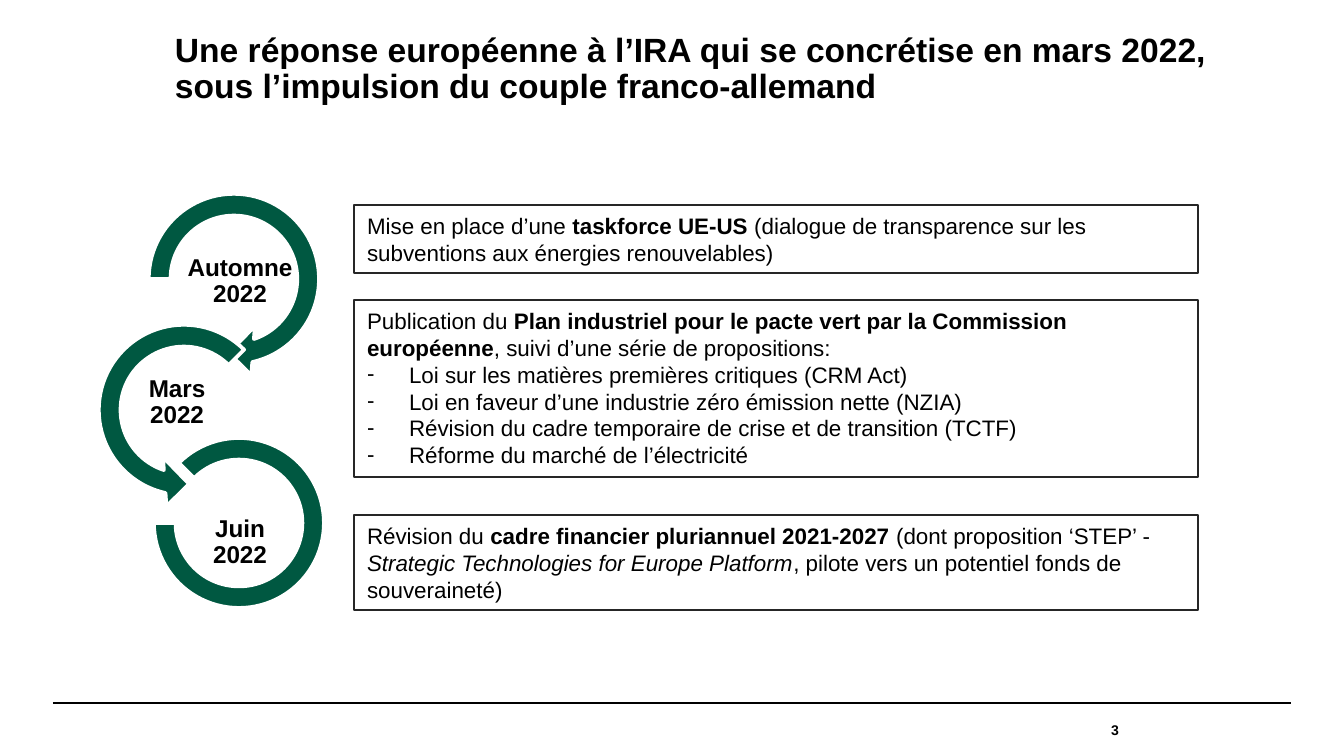
from lxml.etree import SubElement
from pptx import Presentation
from pptx.dml.color import RGBColor
from pptx.enum.shapes import MSO_CONNECTOR, MSO_SHAPE
from pptx.enum.text import MSO_ANCHOR, PP_ALIGN
from pptx.oxml.ns import qn
from pptx.util import Emu, Pt

SCALE = 914400 / 134.4  # EMU per px
BLACK, WHITE, GREEN, BORDER = "000000", "FFFFFF", "005841", "262626"


def color(value):
    return RGBColor.from_string(value)


def write(shape, paragraphs, size, inset=(0, 0), anchor=MSO_ANCHOR.TOP,
          align=PP_ALIGN.LEFT, spacing=1.0):
    """Each paragraph is a list of (text, style); style holds b, i or - (bullet)."""
    frame = shape.text_frame
    frame.word_wrap = True
    frame.vertical_anchor = anchor
    frame.margin_left = frame.margin_right = Emu(round(inset[0] * SCALE))
    frame.margin_top = frame.margin_bottom = Emu(round(inset[1] * SCALE))
    for index, runs in enumerate(paragraphs):
        paragraph = frame.add_paragraph() if index else frame.paragraphs[0]
        paragraph.alignment = align
        paragraph.line_spacing = spacing
        if "-" in runs[0][1]:
            properties = paragraph._p.get_or_add_pPr()
            indent = round(42 * SCALE)
            properties.set("marL", str(indent))
            properties.set("indent", str(-indent))
            SubElement(properties, qn("a:buFont"), typeface="Arial")
            SubElement(properties, qn("a:buChar"), char="-")
        for text, style in runs:
            run = paragraph.add_run()
            run.text = text
            run.font.name = "Arial"
            run.font.size = Pt(size)
            run.font.bold = "b" in style
            run.font.italic = "i" in style
            run.font.color.rgb = color(BLACK)


presentation = Presentation()
presentation.slide_width = Emu(round(1344 * SCALE))
presentation.slide_height = Emu(round(756 * SCALE))
slide = presentation.slides.add_slide(presentation.slide_layouts[6])
shapes = slide.shapes

# Footer rule
start, end, level = (Emu(round(value * SCALE)) for value in (53, 1291, 703))
rule = shapes.add_connector(MSO_CONNECTOR.STRAIGHT, start, level, end, level)
rule.line.color.rgb = color(BLACK)
rule.line.width = Pt(0.8)
SubElement(rule._element.spPr, qn("a:effectLst"))

# Title
title = shapes.add_textbox(*(Emu(round(value * SCALE)) for value in (175, 33, 1071, 79)))
write(title, [[("Une réponse européenne à l’IRA qui se concrétise en mars 2022, "
                "sous l’impulsion du couple franco-allemand", "b")]], 18, spacing=0.9)

# Chain of dated rings: preset, ring box, adjustments, label, label position
rings = [
    (MSO_SHAPE.CIRCULAR_ARROW, (135, 180, 198, 198), (0.11, 11.42, 45, 108, 0.125),
     "Automne 2022", (185, 254)),
    (MSO_SHAPE.LEFT_CIRCULAR_ARROW, (85, 311, 198, 198), (0.11, 11.42, 63, 189, 0.125),
     "Mars 2022", (122, 375)),
    (MSO_SHAPE.BLOCK_ARC, (154, 438, 170, 170), (135, 108, 0.127),
     "Juin 2022", (185, 515)),
]
for preset, box, adjustments, date, position in rings:
    ring = shapes.add_shape(preset, *(Emu(round(value * SCALE)) for value in box))
    ring.shadow.inherit = False
    for index, value in enumerate(adjustments):
        ring.adjustments[index] = value
    ring.fill.solid()
    ring.fill.fore_color.rgb = color(GREEN)
    ring.line.color.rgb = color(WHITE)
    ring.line.width = Pt(2)
    label = shapes.add_textbox(*(Emu(round(value * SCALE)) for value in (*position, 110, 55)))
    write(label, [[(date, "b")]], 13, (1, 1), MSO_ANCHOR.MIDDLE, PP_ALIGN.CENTER, 0.9)

# Framed descriptions: top, height, paragraphs
descriptions = [
    (205, 68, [[
        ("Mise en place d’une ", ""),
        ("taskforce UE-US ", "b"),
        ("(dialogue de transparence sur les subventions aux énergies renouvelables)", ""),
    ]]),
    (300, 177, [
        [("Publication du ", ""),
         ("Plan industriel pour le pacte vert par la Commission européenne", "b"),
         (", suivi d’une série de propositions:", "")],
        [("Loi sur les matières premières critiques (CRM Act)", "-")],
        [("Loi en faveur d’une industrie zéro émission nette (NZIA)", "-")],
        [("Révision du cadre temporaire de crise et de transition (TCTF)", "-")],
        [("Réforme du marché de l’électricité", "-")],
    ]),
    (515, 95, [[
        ("Révision du ", ""),
        ("cadre financier pluriannuel 2021-2027 ", "b"),
        ("(dont proposition ‘STEP’ - ", ""),
        ("Strategic Technologies for Europe Platform", "i"),
        (", pilote vers un potentiel fonds de souveraineté)", ""),
    ]]),
]
for top, height, paragraphs in descriptions:
    frame_box = (Emu(round(value * SCALE)) for value in (354, top, 844, height))
    description = shapes.add_shape(MSO_SHAPE.RECTANGLE, *frame_box)
    description.shadow.inherit = False
    description.fill.background()
    description.line.color.rgb = color(BORDER)
    description.line.width = Pt(0.75)
    write(description, paragraphs, 12, (13, 7))

# Page number
number = shapes.add_textbox(*(Emu(round(value * SCALE)) for value in (920, 703, 199, 53)))
write(number, [[("3", "b")]], 7.5, anchor=MSO_ANCHOR.MIDDLE, align=PP_ALIGN.RIGHT)

presentation.save("out.pptx")
